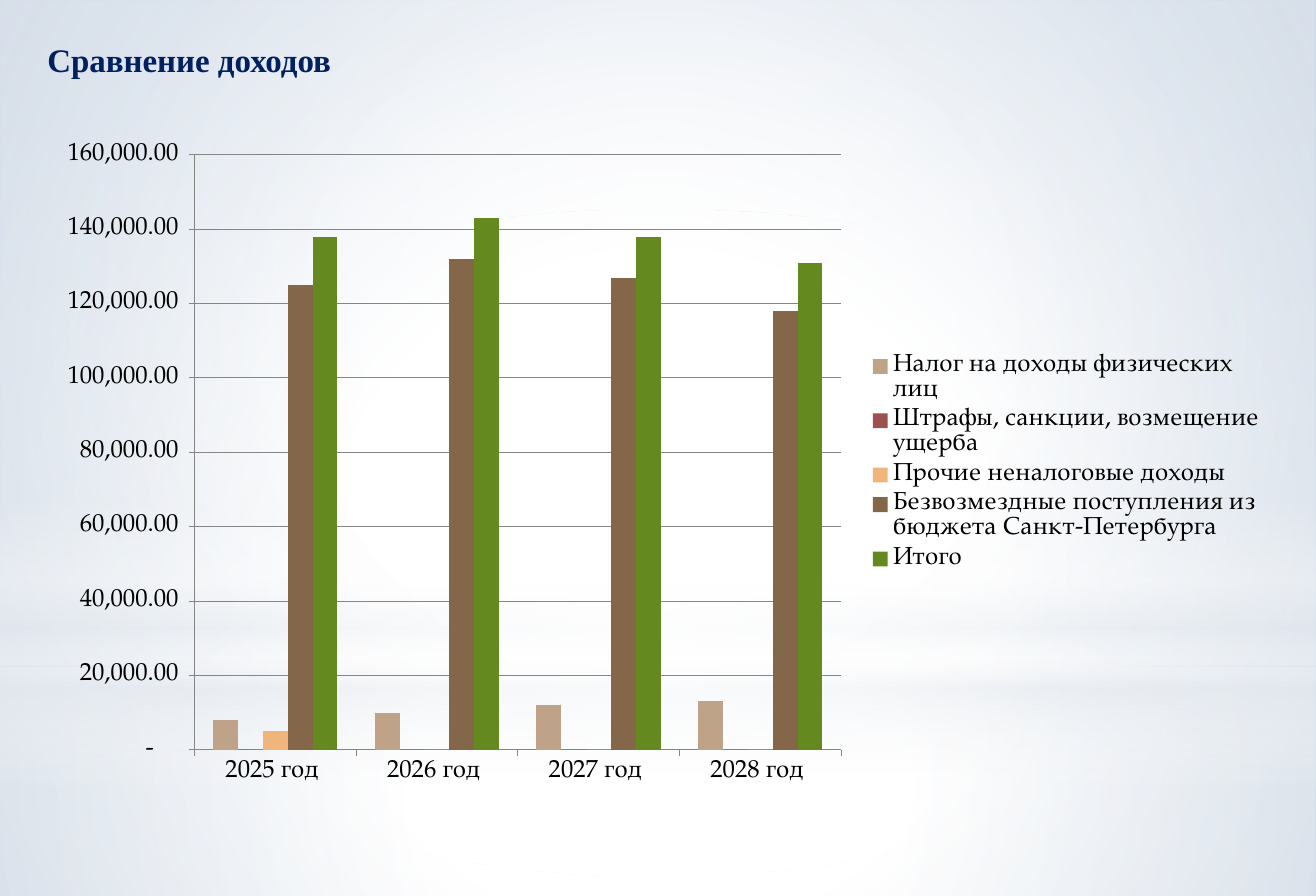
from lxml import etree
from pptx import Presentation
from pptx.chart.data import CategoryChartData
from pptx.dml.color import RGBColor
from pptx.enum.chart import XL_CHART_TYPE, XL_LEGEND_POSITION, XL_TICK_MARK
from pptx.enum.shapes import MSO_SHAPE
from pptx.enum.text import MSO_ANCHOR, MSO_AUTO_SIZE, PP_ALIGN
from pptx.oxml.ns import qn
from pptx.util import Inches, Pt

COLUMNS = XL_CHART_TYPE.COLUMN_CLUSTERED
RIGHT = XL_LEGEND_POSITION.RIGHT
OUTSIDE = XL_TICK_MARK.OUTSIDE
RECT, OVAL = MSO_SHAPE.RECTANGLE, MSO_SHAPE.OVAL
WIDTH, HEIGHT = 13.33, 9.08
COLORS = {
    "white": "FFFFFF", "mist": "E4E9EF", "sky": "AABDD5", "navy": "002060",
    "text": "000000", "grid": "868686", "tax": "BEA388", "fines": "9C5252",
    "other": "F0B57A", "grants": "846648", "total": "63891F",
}
NUMBER_FORMAT = '_(* #,##0.00_);_(* \\(#,##0.00\\);_(* "-"??_);_(@_)'
YEARS = ["2025 год ", "2026 год ", "2027 год ", "2028 год "]
INCOME = [
    ("Налог на доходы физических лиц", "tax", (8000, 10000, 12000, 13000)),
    ("Штрафы, санкции, возмещение ущерба", "fines", (0, 0, 0, 0)),
    ("Прочие неналоговые доходы", "other", (5000, 0, 0, 0)),
    ("Безвозмездные поступления из \nбюджета Санкт-Петербурга ", "grants",
     (125000, 132000, 127000, 118000)),
    ("Итого", "total", (138000, 143000, 138000, 131000)),
]
CENTER = (50, 50, 50, 50)
BACKDROP = [
    (RECT, (0, 6.76, WIDTH, 2.32), CENTER,
     [(0, "white", 91), (37, "white", 76), (100, "mist", 79)]),
    (RECT, (0, 0, WIDTH, 6.76), CENTER,
     [(0, "white", 89), (48, "white", 62), (100, "mist", 79)]),
    (RECT, (0, 4.99, WIDTH, 3.03), None,
     [(0, "white", 0), (29, "white", 30), (45, "mist", 40),
      (55, "white", 26), (65, "mist", 60), (100, "white", 0)]),
    (OVAL, (0, 2.12, WIDTH, 6.76), CENTER,
     [(0, "white", 100), (56, "white", 0)]),
]


def rgb(name):
    """Return a palette colour."""
    return RGBColor.from_string(COLORS[name])


def apply(obj, values):
    """Set attributes of an object from a dict."""
    for name, value in values.items():
        setattr(obj, name, value)


def set_gradient(fill, element, stops, focus):
    """Fill with stops of (position, colour, opacity), radial if focus is given."""
    fill.gradient()
    grad = element.find(".//" + qn("a:gradFill"))
    for child in list(grad):
        grad.remove(child)
    stop_list = etree.SubElement(grad, qn("a:gsLst"))
    for position, color, opacity in stops:
        stop = etree.SubElement(stop_list, qn("a:gs"), pos=str(position * 1000))
        clr = etree.SubElement(stop, qn("a:srgbClr"), val=COLORS[color])
        etree.SubElement(clr, qn("a:alpha"), val=str(opacity * 1000))
    if focus:
        circle = etree.SubElement(grad, qn("a:path"), path="circle")
        sides = {side: str(v * 1000) for side, v in zip("ltrb", focus)}
        etree.SubElement(circle, qn("a:fillToRect"), sides)
    else:
        etree.SubElement(grad, qn("a:lin"), ang="5400000", scaled="0")


def add_backdrop(slide):
    """Paint the background and its soft light layers."""
    set_gradient(slide.background.fill, slide._element,
                 [(0, "white", 100), (42, "white", 100), (100, "sky", 100)],
                 (24, 44, 24, 12))
    for kind, box, focus, stops in BACKDROP:
        sp = slide.shapes.add_shape(kind, *map(Inches, box))
        sp.shadow.inherit = False
        sp.line.fill.background()
        set_gradient(sp.fill, sp._element, stops, focus)


def add_title(slide, box, text):
    """Place the slide title in front of the backdrop."""
    sp = slide.shapes.title
    slide.shapes._spTree.append(sp._element)
    apply(sp, dict(zip(("left", "top", "width", "height"), map(Inches, box))))
    tf = sp.text_frame
    tf.text = text
    apply(tf, {"margin_left": 0, "margin_top": 0, "margin_right": 0,
               "margin_bottom": 0, "word_wrap": False,
               "auto_size": MSO_AUTO_SIZE.NONE, "vertical_anchor": MSO_ANCHOR.TOP})
    p = tf.paragraphs[0]
    p.alignment = PP_ALIGN.LEFT
    r = p.runs[0]
    apply(r.font, {"name": "Times New Roman", "size": Pt(24), "bold": True})
    r.font.color.rgb = rgb("navy")


def make_layout(box, width, height, inner=False):
    """Build a manual layout from a box in inches within the chart area."""
    layout = etree.Element(qn("c:layout"))
    manual = etree.SubElement(layout, qn("c:manualLayout"))
    settings = [("layoutTarget", "inner")] if inner else []
    settings += [("xMode", "edge"), ("yMode", "edge")]
    settings += zip("xywh", (v / full for v, full in zip(box, (width, height) * 2)))
    for tag, value in settings:
        etree.SubElement(manual, qn("c:" + tag), val=str(value))
    return layout


def place_chart_parts(chart, width, height):
    """Fix the positions of the plot and the legend."""
    plot = chart._chartSpace.find(".//" + qn("c:plotArea"))
    legend = chart.legend._element
    for part in (plot, legend):
        for old in part.findall(qn("c:layout")):
            part.remove(old)
    plot.insert(0, make_layout((1.6, 0.26, 6.55, 6.03), width, height, inner=True))
    legend.find(qn("c:legendPos")).addnext(
        make_layout((8.43, 2.23, 4.03, 2.3), width, height))


def add_income_chart(slide, box):
    """Add the clustered columns comparing income by year."""
    data = CategoryChartData(number_format=NUMBER_FORMAT)
    data.categories = YEARS
    for name, _, values in INCOME:
        data.add_series(name, values)
    chart = slide.shapes.add_chart(COLUMNS, *map(Inches, box), data).chart
    apply(chart, {"has_title": False, "has_legend": True})
    apply(chart.font, {"name": "TeX Gyre Pagella", "size": Pt(18)})
    chart.font.color.rgb = rgb("text")
    apply(chart.legend, {"position": RIGHT, "include_in_layout": False})
    apply(chart.plots[0], {"gap_width": 150, "overlap": 0,
                           "vary_by_categories": False})
    for series, (_, color, _) in zip(chart.plots[0].series, INCOME):
        series.invert_if_negative = False
        series.format.fill.solid()
        series.format.fill.fore_color.rgb = rgb(color)
    value_axis = chart.value_axis
    apply(value_axis, {"minimum_scale": 0, "maximum_scale": 160000,
                       "major_unit": 20000, "has_major_gridlines": True})
    apply(value_axis.tick_labels, {"number_format": NUMBER_FORMAT,
                                   "number_format_is_linked": False})
    for axis in (chart.category_axis, value_axis):
        axis.major_tick_mark = OUTSIDE
    for part in (chart.category_axis, value_axis, value_axis.major_gridlines):
        part.format.line.width = Pt(0.75)
        part.format.line.color.rgb = rgb("grid")
    place_chart_parts(chart, *box[2:])


def main():
    """Build and save the presentation."""
    prs = Presentation()
    apply(prs, {"slide_width": Inches(WIDTH), "slide_height": Inches(HEIGHT)})
    slide = prs.slides.add_slide(prs.slide_layouts[5])
    add_backdrop(slide)
    add_title(slide, (0.48, 0.4, 3.1, 0.44), "Сравнение доходов")
    add_income_chart(slide, (0.37, 1.31, 12.6, 6.77))
    prs.save("out.pptx")


if __name__ == "__main__":
    main()
